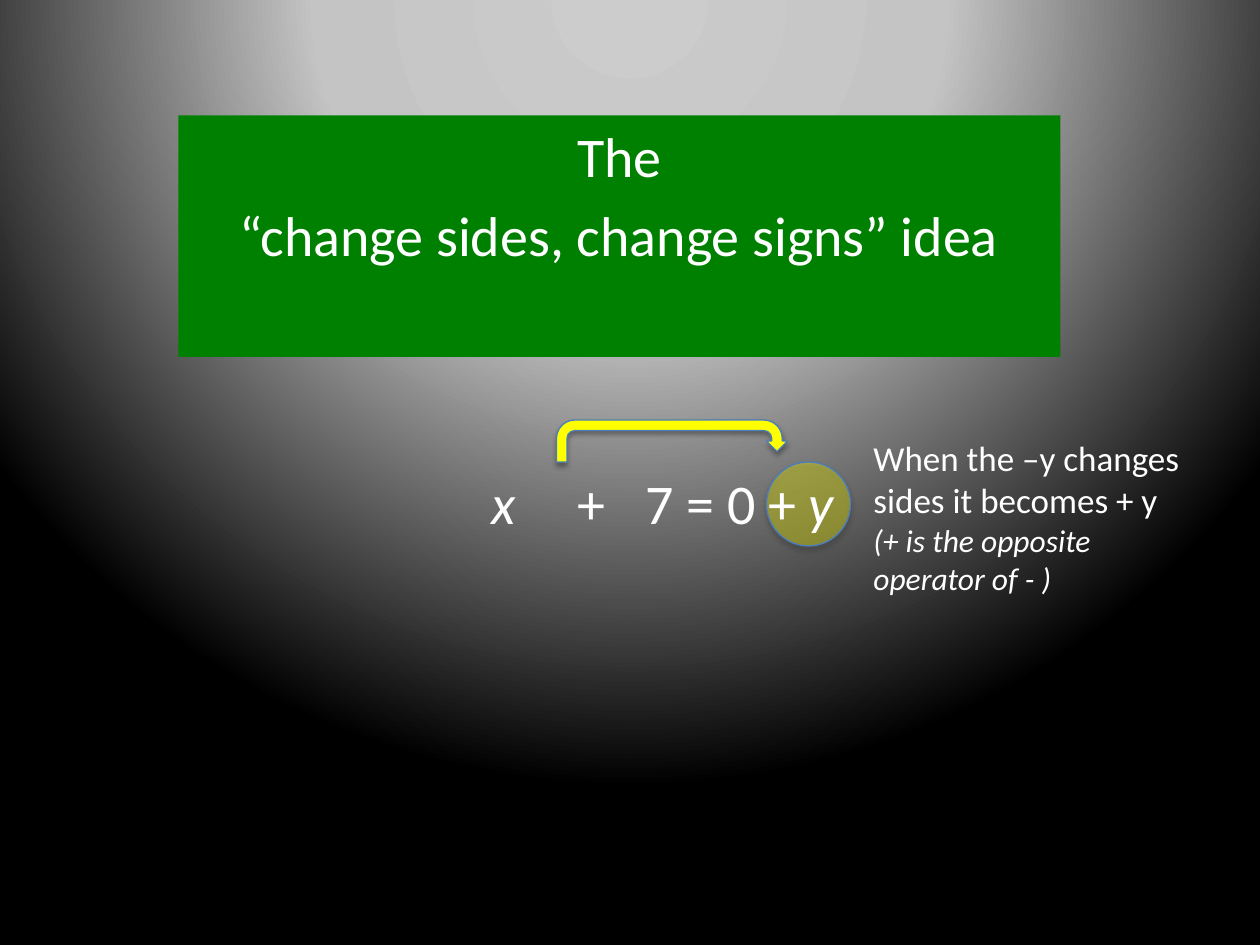
import pptx
import pptx.dml.color
import pptx.enum.shapes
import pptx.enum.text
import pptx.oxml
import pptx.oxml.ns
import pptx.util

Pt = pptx.util.Pt
SHAPE = pptx.enum.shapes.MSO_SHAPE
ALIGN = pptx.enum.text.PP_ALIGN
ANCHOR = pptx.enum.text.MSO_ANCHOR
qn = pptx.oxml.ns.qn
A_NS = pptx.oxml.ns.nsdecls("a")

COLORS = {
    "text": "FFFFFF",
    "title": "008000",
    "highlight": "FFFF00",
    "outline": "4B7EBC",
    "shadow": "000000",
}
BACKDROP = [(0, "CCCCCC"), (40, "C4C4C4"), (100, "000000")]


def rgb(name):
    return pptx.dml.color.RGBColor.from_string(COLORS[name])


class SlideBuilder:
    font_name = "Calibri"

    def __init__(self, slide):
        self.slide = slide

    def backdrop(self, stops):
        """Radial gradient centred above the slide's top edge."""
        self.slide.background.fill.gradient()
        gradient = next(self.slide.element.iter(qn("a:gradFill")))
        for child in list(gradient):
            gradient.remove(child)
        stop_xml = "".join(
            f'<a:gs pos="{pos * 1000}"><a:srgbClr val="{color}"/></a:gs>'
            for pos, color in stops)
        gradient.append(pptx.oxml.parse_xml(f"<a:gsLst {A_NS}>{stop_xml}</a:gsLst>"))
        gradient.append(pptx.oxml.parse_xml(
            f'<a:path {A_NS} path="circle"><a:fillToRect l="50000" t="-80000" '
            'r="50000" b="180000"/></a:path>'))

    def shape(self, kind, box, fill):
        shape = self.slide.shapes.add_shape(kind, *map(Pt, box))
        shape.shadow.inherit = False
        shape.fill.solid()
        shape.fill.fore_color.rgb = rgb(fill)
        shape.line.fill.background()
        return shape

    def marker(self, kind, box, opacity=100):
        """Yellow outlined shape with a soft shadow below it."""
        marker = self.shape(kind, box, "highlight")
        marker.line.color.rgb = rgb("outline")
        marker.line.width = Pt(0.75)
        if opacity < 100:
            color = next(marker.element.spPr.find(qn("a:solidFill")).iter(qn("a:srgbClr")))
            color.append(pptx.oxml.parse_xml(f'<a:alpha {A_NS} val="{opacity * 1000}"/>'))
        marker.element.spPr.find(qn("a:effectLst")).append(pptx.oxml.parse_xml(
            f'<a:outerShdw {A_NS} blurRad="{Pt(3.1)}" dist="{Pt(1.8)}" dir="5400000" '
            f'rotWithShape="0"><a:srgbClr val="{COLORS["shadow"]}">'
            '<a:alpha val="35000"/></a:srgbClr></a:outerShdw>'))

    def fill_text(self, frame, paragraphs, align=ALIGN.LEFT, gap=0, tabs=()):
        """Each paragraph is a list of (text, size, italic) runs."""
        frame.word_wrap = True
        frame.vertical_anchor = ANCHOR.TOP
        for index, runs in enumerate(paragraphs):
            paragraph = frame.paragraphs[0] if index == 0 else frame.add_paragraph()
            paragraph.alignment = align
            if index and gap:
                paragraph.space_before = Pt(gap)
            if tabs:
                stops = "".join(f'<a:tab pos="{Pt(pos)}" algn="l"/>' for pos in tabs)
                paragraph._p.get_or_add_pPr().append(
                    pptx.oxml.parse_xml(f"<a:tabLst {A_NS}>{stops}</a:tabLst>"))
            for text, size, italic in runs:
                run = paragraph.add_run()
                run.text = text
                style = {"name": self.font_name, "size": Pt(size), "italic": italic}
                for attribute, value in style.items():
                    setattr(run.font, attribute, value)
                run.font.color.rgb = rgb("text")

    def text(self, box, paragraphs, **layout):
        label = self.slide.shapes.add_textbox(*map(Pt, box))
        self.fill_text(label.text_frame, paragraphs, **layout)


def main():
    deck = pptx.Presentation()
    deck.slide_width, deck.slide_height = Pt(720), Pt(540)
    builder = SlideBuilder(deck.slides.add_slide(deck.slide_layouts[6]))
    builder.backdrop(BACKDROP)

    # Title panel
    title = builder.shape(SHAPE.RECTANGLE, (102, 66, 504, 138), "title")
    builder.fill_text(title.text_frame,
                      [[("The", 32, False)],
                       [("“change sides, change signs” idea", 32, False)]],
                      align=ALIGN.CENTER, gap=6.4)

    # Highlight behind the moved term
    builder.marker(SHAPE.OVAL, (438, 264, 48, 48), opacity=34)

    # Equation, with the gap left by the moved term
    builder.text((132, 264, 413, 51),
                 [[("\tx", 32, True), ("\t+\t7 = 0", 32, False)]],
                 tabs=(142, 191, 230))

    # Arrow across the equals sign
    builder.marker(SHAPE.U_TURN_ARROW, (318, 240, 132, 24))

    # Explanation
    builder.text((492, 246, 198, 99),
                 [[("When the –y changes sides it becomes + y", 20, False)],
                  [("(+ is the opposite operator of - )", 18, True)]])

    # Moved term
    builder.text((432, 264, 60, 46), [[("+ ", 32, False), ("y", 32, True)]])

    deck.save("out.pptx")


if __name__ == "__main__":
    main()
